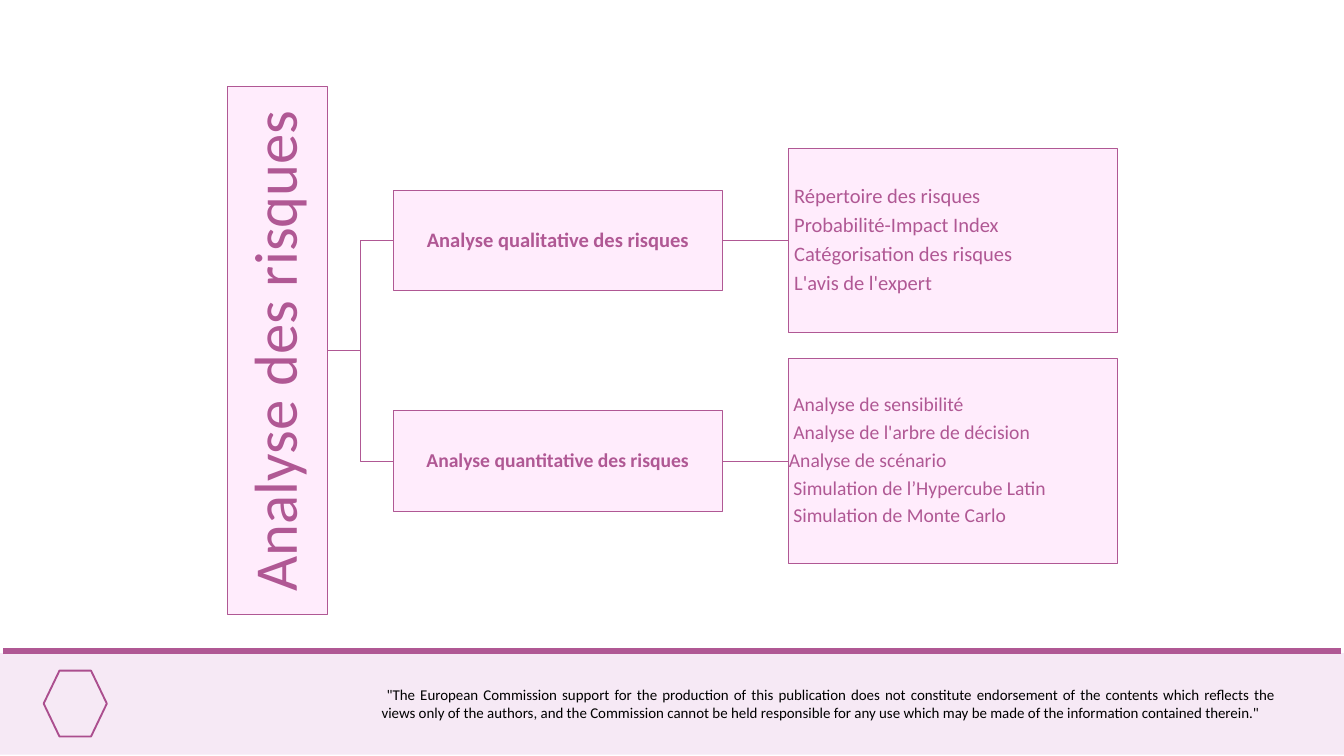
from lxml import etree
from pptx import Presentation
from pptx import util as u
from pptx.dml.color import RGBColor
from pptx.enum import shapes, text
from pptx.oxml.ns import qn

PLUM, PINK, BAND, ICON, BLACK = "B05894", "FFECFC", "F6E9F5", "AB4E8E", "000000"
TITLE = "Analyse des risques"
BRANCHES = [
    {"label": "Analyse qualitative des risques", "size": 22, "inset": 0.02,
     "middle": 3.58, "height": 2.75,
     "items": [" Répertoire des risques", " Probabilité-Impact Index",
               " Catégorisation des risques", " L'avis de l'expert"]},
    {"label": "Analyse quantitative des risques", "size": 21, "inset": 0.01,
     "middle": 6.86, "height": 3.04,
     "items": [" Analyse de sensibilité", " Analyse de l'arbre de décision",
               "Analyse de scénario", " Simulation de l’Hypercube Latin",
               " Simulation de Monte Carlo"]},
]
DISCLAIMER = (
    " \"The European Commission support for the production of this publication does not "
    "constitute endorsement of the contents which reflects the views only of the authors, "
    "and the Commission cannot be held responsible for any use which may be made of the "
    "information contained therein.\"")

ROOT_RIGHT, ROOT_MIDDLE = 4.87, 5.22
ROOT_LENGTH, BOX_HEIGHT, BOX_WIDTH, GAP = 7.86, 1.49, 4.9, 0.98
LABEL_LEFT = ROOT_RIGHT + GAP
LIST_LEFT = LABEL_LEFT + BOX_WIDTH + GAP


def color(value):
    return RGBColor.from_string(value)


def place(sp, left, top, width, height):
    sp.left, sp.top, sp.width, sp.height = map(u.Inches, (left, top, width, height))


def paint(sp, fill, line=None, weight=1):
    if fill:
        sp.fill.solid()
        sp.fill.fore_color.rgb = color(fill)
    else:
        sp.fill.background()
    if line:
        sp.line.color.rgb = color(line)
        sp.line.width = u.Pt(weight)
    else:
        sp.line.fill.background()


def add_shape(s, kind, left, top, width, height, fill, line=None, weight=1):
    sp = s.shapes.add_shape(kind, *map(u.Inches, (left, top, width, height)))
    sp.shadow.inherit = False
    paint(sp, fill, line, weight)
    return sp


def write(sp, lines, size, inset, align, bold=False):
    tf = sp.text_frame
    tf.word_wrap = True
    tf.auto_size = text.MSO_AUTO_SIZE.NONE
    tf.vertical_anchor = text.MSO_ANCHOR.MIDDLE
    tf.margin_left = tf.margin_right = tf.margin_top = tf.margin_bottom = u.Inches(inset)
    tf.text = "\n".join(lines)
    for p in tf.paragraphs:
        p.alignment = align
        p.line_spacing = 0.9
        p.space_after = u.Pt(round(size * 0.34, 1))
        p.font.name, p.font.size, p.font.bold = "Calibri", u.Pt(size), bold
        p.font.color.rgb = color(PLUM)


def connect(s, kind, x1, y1, x2, y2, weight=1):
    c = s.shapes.add_connector(kind, *map(u.Inches, (x1, y1, x2, y2)))
    c.line.color.rgb = color(PLUM)
    c.line.width = u.Pt(weight)
    etree.SubElement(c._element.spPr, qn("a:effectLst"))


def add_footer(s):
    add_shape(s, shapes.MSO_SHAPE.RECTANGLE, 0, 9.72, 20, 1.51, BAND)
    connect(s, shapes.MSO_CONNECTOR.STRAIGHT, 0.05, 9.69, 19.95, 9.69, 6.75)
    add_shape(s, shapes.MSO_SHAPE.HEXAGON, 0.65, 9.98, 0.94, 0.98, None, ICON, 2)
    tf = s.shapes.add_textbox(*map(u.Inches, (5.58, 10.15, 13.5, 0.64))).text_frame
    tf.word_wrap = True
    p = tf.paragraphs[0]
    p.text = DISCLAIMER
    p.alignment = text.PP_ALIGN.JUSTIFY
    p.font.name, p.font.size = "Calibri", u.Pt(16)
    p.font.color.rgb = color(BLACK)


def add_root(s):
    title = s.shapes.title
    center = ROOT_RIGHT - BOX_HEIGHT / 2
    place(title, center - ROOT_LENGTH / 2, ROOT_MIDDLE - BOX_HEIGHT / 2,
          ROOT_LENGTH, BOX_HEIGHT)
    title.rotation = 270
    paint(title, PINK, PLUM)
    write(title, [TITLE], 65, 0.05, text.PP_ALIGN.CENTER)


def add_branch(s, branch):
    middle, size, inset = branch["middle"], branch["size"], branch["inset"]
    connect(s, shapes.MSO_CONNECTOR.ELBOW, ROOT_RIGHT, ROOT_MIDDLE, LABEL_LEFT, middle)
    connect(s, shapes.MSO_CONNECTOR.STRAIGHT, LIST_LEFT - GAP, middle, LIST_LEFT, middle)
    for left, height, lines, align, bold in (
            (LABEL_LEFT, BOX_HEIGHT, [branch["label"]], text.PP_ALIGN.CENTER, True),
            (LIST_LEFT, branch["height"], branch["items"], text.PP_ALIGN.LEFT, False)):
        sp = add_shape(s, shapes.MSO_SHAPE.RECTANGLE, left, middle - height / 2,
                       BOX_WIDTH, height, PINK, PLUM)
        write(sp, lines, size, inset, align, bold)


def main():
    prs = Presentation()
    prs.slide_width, prs.slide_height = u.Inches(20), u.Inches(11.25)
    s = prs.slides.add_slide(prs.slide_layouts[5])
    add_footer(s)
    add_root(s)
    for branch in BRANCHES:
        add_branch(s, branch)
    prs.save("out.pptx")


if __name__ == "__main__":
    main()
